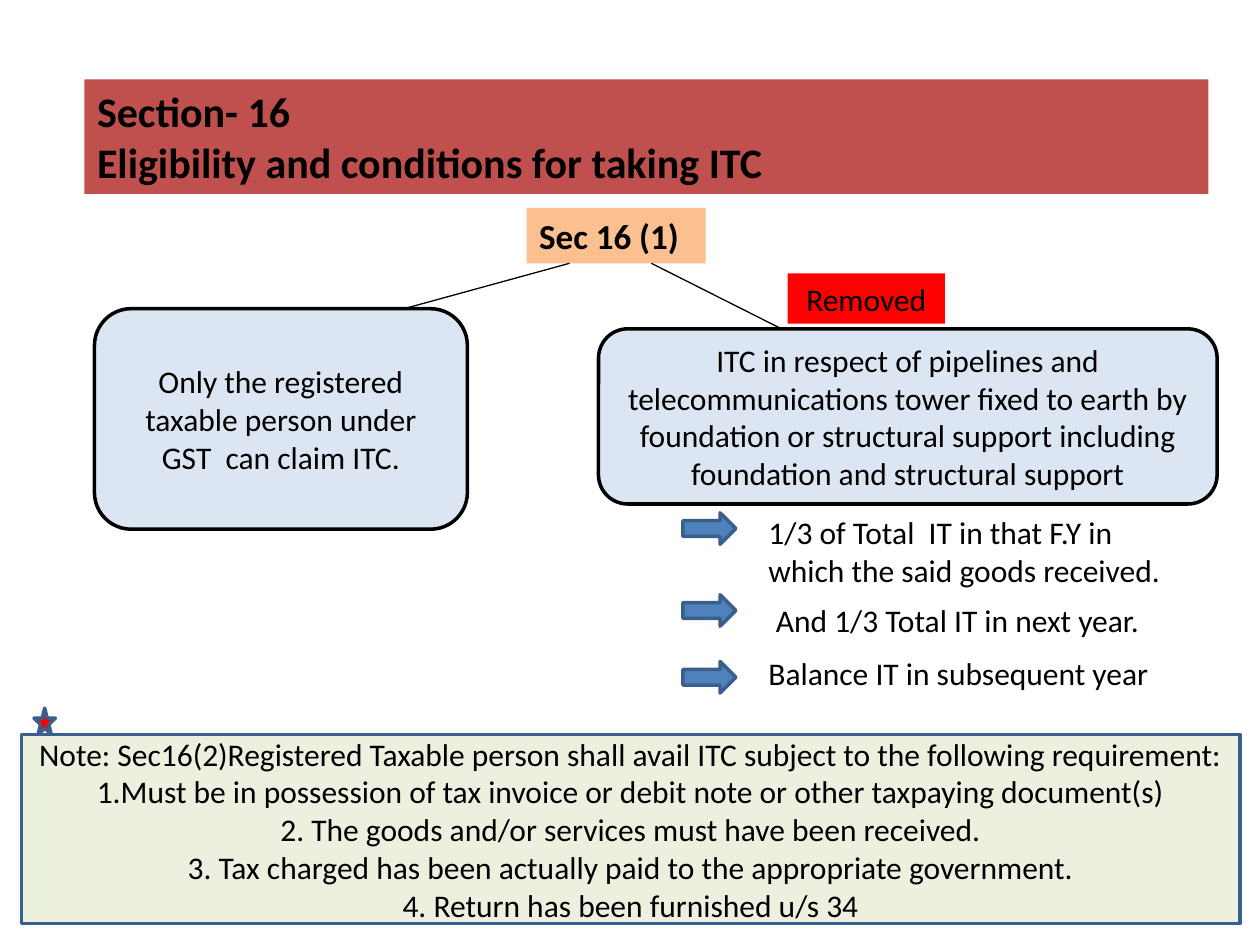
import pptx
import pptx.util
import pptx.dml.color
import pptx.enum.shapes
import pptx.enum.text
import pptx.oxml.ns
from lxml import etree

Inches = pptx.util.Inches
Shape = pptx.enum.shapes.MSO_SHAPE
Align = pptx.enum.text.PP_ALIGN
Anchor = pptx.enum.text.MSO_ANCHOR

THEME = {
    "font": "Calibri", "title_size": 24, "section_size": 20, "body_size": 18,
    "text": "000000", "banner": "C0504D", "section": "FAC090", "box": "DCE6F2",
    "arrow": "4F81BD", "outline": "3A5F8C", "note": "EBF1DE", "alert": "FF0000",
    "line_width": 2, "branch_width": 0.75,
}


def color(name):
    return pptx.dml.color.RGBColor.from_string(THEME[name])


def write(shape, text, size="body_size", bold=False, align=Align.LEFT, anchor=Anchor.TOP):
    frame = shape.text_frame
    frame.text = text
    frame.word_wrap = True
    frame.auto_size = pptx.enum.text.MSO_AUTO_SIZE.NONE
    frame.vertical_anchor = anchor
    for paragraph in frame.paragraphs:
        paragraph.alignment = align
        font_format = {"name": THEME["font"], "size": pptx.util.Pt(THEME[size]), "bold": bold}
        for attribute, value in font_format.items():
            setattr(paragraph.font, attribute, value)
        paragraph.font.color.rgb = color("text")


def add_box(kind, place, fill, outline=None):
    box = slide.shapes.add_shape(kind, *map(Inches, place))
    box.shadow.inherit = False
    box.fill.solid()
    box.fill.fore_color.rgb = color(fill)
    if outline:
        box.line.color.rgb = color(outline)
        box.line.width = pptx.util.Pt(THEME["line_width"])
    else:
        box.line.fill.background()
    return box


deck = pptx.Presentation()
deck.slide_width, deck.slide_height = Inches(10), Inches(7.5)
slide = deck.slides.add_slide(deck.slide_layouts[5])

# Title banner
title = slide.shapes.title
banner_place = {"left": 0.67, "top": 0.63, "width": 8.92, "height": 0.91}
for attribute, value in banner_place.items():
    setattr(title, attribute, Inches(value))
title.fill.solid()
title.fill.fore_color.rgb = color("banner")
write(title, "Section- 16\nEligibility and conditions for taking ITC", "title_size", bold=True)
for paragraph in title.text_frame.paragraphs:
    paragraph.space_before = pptx.util.Pt(0)

# Section heading and its two branches
section = add_box(Shape.RECTANGLE, (4.18, 1.65, 1.42, 0.44), "section")
write(section, "Sec 16 (1)", "section_size", bold=True)

for ends in [(4.52, 2.09, 2.77, 2.57), (5.17, 2.09, 6.5, 2.76)]:
    branch = slide.shapes.add_connector(
        pptx.enum.shapes.MSO_CONNECTOR.STRAIGHT, *map(Inches, ends))
    branch.line.color.rgb = color("text")
    branch.line.width = pptx.util.Pt(THEME["branch_width"])
    etree.SubElement(branch.line._get_or_add_ln(), pptx.oxml.ns.qn("a:tailEnd"), type="arrow")
    etree.SubElement(branch._element.spPr, pptx.oxml.ns.qn("a:effectLst"))

conditions = [
    ((0.75, 2.45, 2.96, 1.75), "Only the registered taxable person under GST  can claim ITC."),
    ((4.75, 2.61, 4.91, 1.39),
     "ITC in respect of pipelines and telecommunications tower fixed to earth by "
     "foundation or structural support including foundation and structural support"),
]
for place, text in conditions:
    condition = add_box(Shape.ROUNDED_RECTANGLE, place, "box", "text")
    write(condition, text, align=Align.CENTER, anchor=Anchor.MIDDLE)

# Credit instalments, each with an arrow
instalments = [
    (4.07, (6, 4.02, 3.58, 0.71), "1/3 of Total  IT in that F.Y in which the said goods received."),
    (4.72, (6.06, 4.72, 3.25, 0.4), "And 1/3 Total IT in next year."),
    (5.25, (6, 5.14, 3.25, 0.42), "Balance IT in subsequent year"),
]
for arrow_top, place, text in instalments:
    add_box(Shape.RIGHT_ARROW, (5.42, arrow_top, 0.42, 0.25), "arrow", "outline")
    write(slide.shapes.add_textbox(*map(Inches, place)), text)

# Note with its star, and the removal tag
requirements = [
    "Note: Sec16(2)Registered Taxable person shall avail ITC subject to the following requirement:",
    "1.Must be in possession of tax invoice or debit note or other taxpaying document(s)",
    "2. The goods and/or services must have been received.",
    "3. Tax charged has been actually paid to the appropriate government.",
    "4. Return has been furnished u/s 34",
]
note = add_box(Shape.RECTANGLE, (0.17, 5.83, 9.67, 1.5), "note", "outline")
write(note, "\n".join(requirements), align=Align.CENTER, anchor=Anchor.MIDDLE)
add_box(Shape.STAR_5_POINT, (0.27, 5.62, 0.17, 0.21), "alert", "outline")

removed = add_box(Shape.RECTANGLE, (6.25, 2.17, 1.25, 0.4), "alert")
write(removed, "Removed", align=Align.CENTER)

deck.save("out.pptx")
